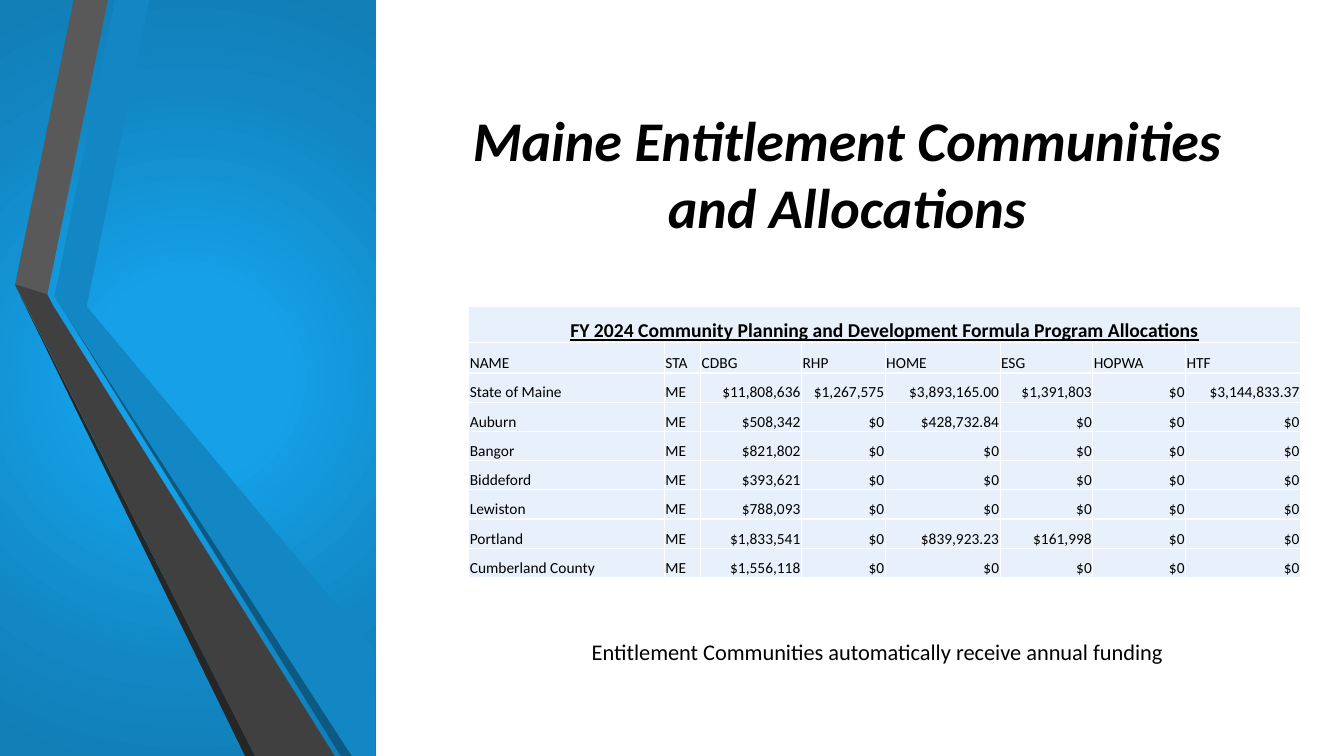
from typing import NamedTuple

from lxml.etree import SubElement
from pptx import Presentation
from pptx.dml.color import RGBColor
from pptx.enum.shapes import MSO_SHAPE
from pptx.enum.text import MSO_ANCHOR, PP_ALIGN
from pptx.oxml import parse_xml
from pptx.oxml.ns import nsdecls, qn
from pptx.util import Inches, Pt

BLACK = RGBColor(0x00, 0x00, 0x00)
WHITE = RGBColor(0xFF, 0xFF, 0xFF)
PALE_BLUE = RGBColor(0xE8, 0xF1, 0xFB)
BRIGHT_BLUE = RGBColor(0x15, 0xA0, 0xE8)
MID_BLUE = RGBColor(0x12, 0x87, 0xC3)
DEEP_BLUE = RGBColor(0x11, 0x7E, 0xB6)
NAVY = RGBColor(0x0C, 0x5A, 0x82)
GREY = RGBColor(0x59, 0x59, 0x59)
DARK_GREY = RGBColor(0x40, 0x40, 0x40)
CHARCOAL = RGBColor(0x26, 0x26, 0x26)
FONT = "Calibri"


class Ribbon(NamedTuple):
    color: RGBColor
    points: list[tuple[float, float]]


class Community(NamedTuple):
    name: str
    cdbg: str
    rhp: str = "$0"
    home: str = "$0"
    esg: str = "$0"
    hopwa: str = "$0"
    htf: str = "$0"


RIBBONS = [
    Ribbon(MID_BLUE, [(0.54, 2.94), (0.86, 3.04), (1.48, 0), (1.14, 0)]),
    Ribbon(GREY, [(0.47, 2.92), (1.07, 0), (0.73, 0), (0.15, 2.82)]),
    Ribbon(CHARCOAL, [(0.15, 2.83), (2.43, 7.5), (2.53, 7.5)]),
    Ribbon(NAVY, [(3.49, 7.5), (0.55, 2.95), (3.38, 7.5)]),
    Ribbon(MID_BLUE, [(0.54, 2.94), (0.86, 3.04), (3.72, 6.46), (3.72, 7.5), (3.49, 7.5)]),
    Ribbon(DARK_GREY, [(3.32, 7.5), (0.52, 3.02), (0.47, 2.92), (0.15, 2.82), (2.53, 7.5)]),
]
GLOW = [(0, BRIGHT_BLUE), (23, BRIGHT_BLUE), (69, MID_BLUE), (97, DEEP_BLUE)]
HEADERS = ["NAME", "STA", "CDBG", "RHP", "HOME", "ESG", "HOPWA", "HTF"]
COMMUNITIES = [
    Community("State of Maine", "$11,808,636", "$1,267,575", "$3,893,165.00",
              "$1,391,803", htf="$3,144,833.37"),
    Community("Auburn", "$508,342", home="$428,732.84"),
    Community("Bangor", "$821,802"),
    Community("Biddeford", "$393,621"),
    Community("Lewiston", "$788,093"),
    Community("Portland", "$1,833,541", home="$839,923.23", esg="$161,998"),
    Community("Cumberland County", "$1,556,118"),
]
COLUMN_WIDTHS = [1.94, 0.36, 1, 0.83, 1.14, 0.92, 0.92, 1.14]
ROW_HEIGHTS = [0.36, 0.3] + [0.29] * len(COMMUNITIES)


def style_text(tf, size: float, bold: bool = False, align=None):
    """Format the only paragraph of a text frame and return its font."""
    p = tf.paragraphs[0]
    p.alignment = align
    font = p.runs[0].font
    font.name, font.size, font.bold = FONT, Pt(size), bold
    font.color.rgb = BLACK
    return font


def add_panel(s) -> None:
    """Draw the glowing blue side panel."""
    panel = s.shapes.add_shape(MSO_SHAPE.RECTANGLE, 0, 0, Inches(3.73), Inches(7.5))
    panel.shadow.inherit = False
    panel.line.fill.background()
    stops = "".join(
        f'<a:gs pos="{pos * 1000}"><a:srgbClr val="{color}"/></a:gs>' for pos, color in GLOW
    )
    glow = parse_xml(
        f'<a:gradFill {nsdecls("a")} rotWithShape="1"><a:gsLst>{stops}</a:gsLst>'
        '<a:path path="circle">'
        '<a:fillToRect l="50000" t="50000" r="50000" b="50000"/></a:path></a:gradFill>'
    )
    panel._element.spPr.find(qn("a:prstGeom")).addnext(glow)


def add_ribbon(s, ribbon: Ribbon) -> None:
    """Draw one folded ribbon segment."""
    start, *rest = [(Inches(x), Inches(y)) for x, y in ribbon.points]
    builder = s.shapes.build_freeform(*start)
    builder.add_line_segments(rest)
    sp = builder.convert_to_shape()
    sp.shadow.inherit = False
    sp.fill.solid()
    sp.fill.fore_color.rgb = ribbon.color
    sp.line.fill.background()


def style_cell(cell) -> None:
    """Give a cell its white borders, pale fill and tight margins."""
    tc_pr = cell._tc.get_or_add_tcPr()
    for side in ("lnL", "lnR", "lnT", "lnB"):
        line = SubElement(tc_pr, qn(f"a:{side}"), w=str(Pt(1)))
        SubElement(SubElement(line, qn("a:solidFill")), qn("a:srgbClr"), val=str(WHITE))
    cell.fill.solid()
    cell.fill.fore_color.rgb = PALE_BLUE
    cell.vertical_anchor = MSO_ANCHOR.BOTTOM
    cell.margin_left = cell.margin_right = cell.margin_top = Inches(0.01)
    cell.margin_bottom = 0


def add_allocations(s) -> None:
    """Build the table of allocations."""
    table = s.shapes.add_table(
        len(ROW_HEIGHTS), len(COLUMN_WIDTHS), Inches(4.65), Inches(3.04),
        Inches(sum(COLUMN_WIDTHS)), Inches(sum(ROW_HEIGHTS)),
    ).table
    table.first_row = table.horz_banding = False
    for column, width in zip(table.columns, COLUMN_WIDTHS):
        column.width = Inches(width)
    for row, height in zip(table.rows, ROW_HEIGHTS):
        row.height = Inches(height)
    for cell in table.iter_cells():
        style_cell(cell)

    heading = table.cell(0, 0)
    heading.merge(table.cell(0, len(COLUMN_WIDTHS) - 1))
    heading.text_frame.text = (
        "FY 2024 Community Planning and Development Formula Program Allocations"
    )
    style_text(heading.text_frame, 14, True, PP_ALIGN.CENTER).underline = True

    rows = [HEADERS] + [[c.name, "ME", *c[1:]] for c in COMMUNITIES]
    for i, values in enumerate(rows, start=1):
        for j, value in enumerate(values):
            tf = table.cell(i, j).text_frame
            tf.text = value
            align = PP_ALIGN.RIGHT if value.startswith("$") else PP_ALIGN.LEFT
            style_text(tf, 11, align=align)


def main() -> None:
    """Build and save the slide."""
    prs = Presentation()
    prs.slide_width, prs.slide_height = Inches(13.33), Inches(7.5)
    s = prs.slides.add_slide(prs.slide_layouts[5])

    title = s.shapes.title
    title.left, title.top = Inches(4.22), Inches(0.75)
    title.width, title.height = Inches(8.36), Inches(1.92)
    title.text_frame.text = "Maine Entitlement Communities and Allocations"
    title.text_frame.vertical_anchor = MSO_ANCHOR.MIDDLE
    style_text(title.text_frame, 40, True, PP_ALIGN.CENTER).italic = True

    add_panel(s)
    for ribbon in RIBBONS:
        add_ribbon(s, ribbon)
    add_allocations(s)

    note = s.shapes.add_textbox(Inches(5.77), Inches(6.28), Inches(6.81), Inches(0.37))
    note.text_frame.word_wrap = True
    note.text_frame.text = "Entitlement Communities automatically receive annual funding"
    style_text(note.text_frame, 16)

    prs.save("out.pptx")


if __name__ == "__main__":
    main()
